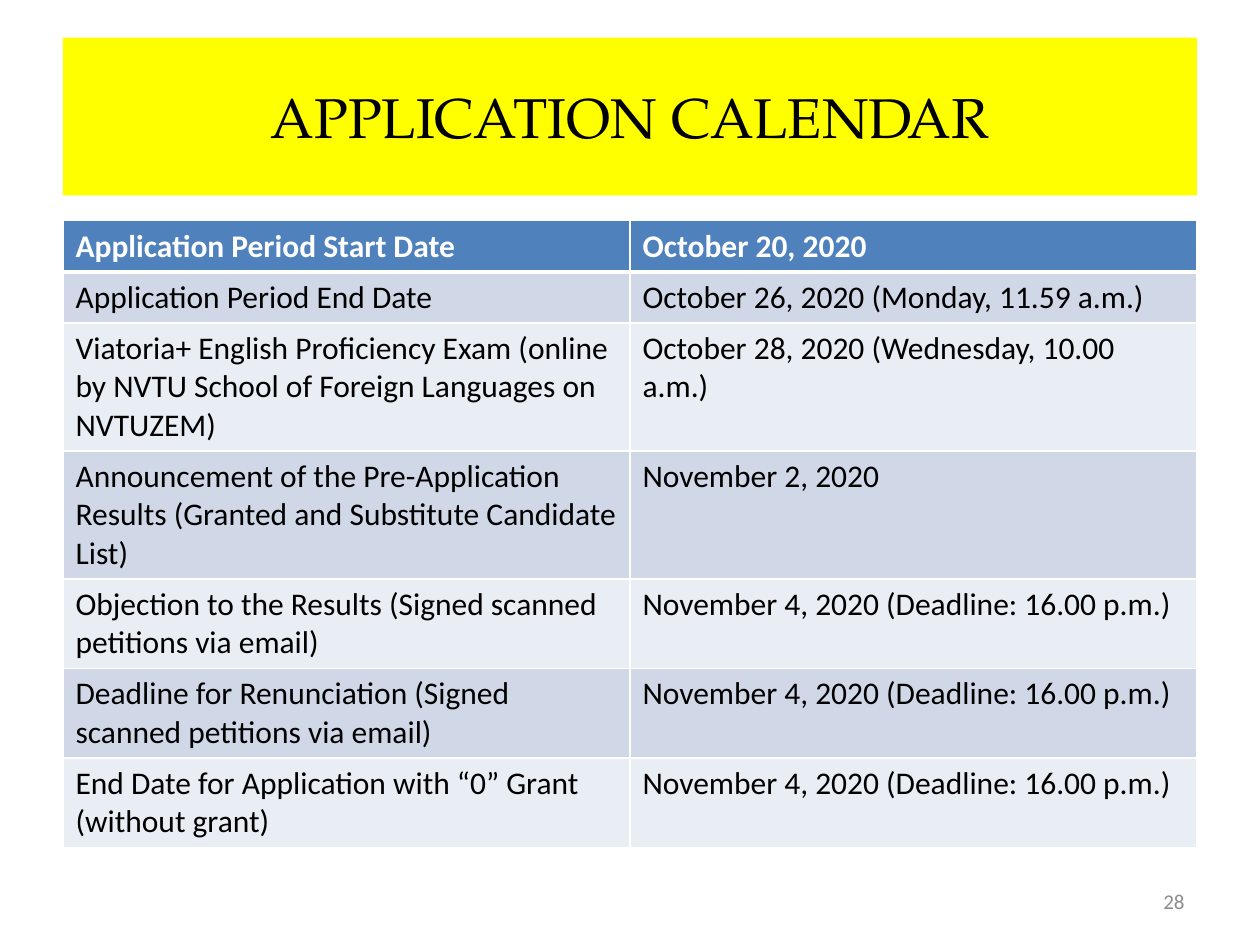
from lxml.etree import SubElement as Sub
from pptx import Presentation
from pptx.dml.color import RGBColor as Rgb
from pptx.enum.shapes import MSO_SHAPE as Shape
from pptx.enum.text import MSO_ANCHOR as Anchor, PP_ALIGN as Align
from pptx.oxml.ns import qn
from pptx.util import Cm, Pt

ROWS = [
    ("Application Period Start Date", "October 20, 2020"),
    ("Application Period End Date", "October 26, 2020 (Monday, 11.59 a.m.)"),
    ("Viatoria+ English Proficiency Exam (online by NVTU School of Foreign "
     "Languages on NVTUZEM)", "October 28, 2020 (Wednesday, 10.00 a.m.)"),
    ("Announcement of the Pre-Application Results (Granted and Substitute "
     "Candidate List)", "November 2, 2020"),
    ("Objection to the Results (Signed scanned petitions via email)",
     "November 4, 2020 (Deadline: 16.00 p.m.)"),
    ("Deadline for Renunciation (Signed scanned petitions via email)",
     "November 4, 2020 (Deadline: 16.00 p.m.)"),
    ("End Date for Application with “0” Grant (without grant)",
     "November 4, 2020 (Deadline: 16.00 p.m.)"),
]
TITLE = {"name": "TeX Gyre Pagella", "size": Pt(32)}
HEAD = {"name": "Calibri", "size": Pt(18), "bold": True}
BODY = {**HEAD, "bold": False}
PAGE = {"name": "Calibri", "size": Pt(12)}
EDGES = {"lnL": 1, "lnR": 1, "lnT": 1, "lnB": 3}


def paint(item, tone):
    """Give a fill or a font a solid hex colour."""
    if hasattr(item, "solid"):
        item.solid()
        item = item.fore_color
    else:
        item = item.color
    item.rgb = Rgb.from_string(tone)


def edge(cell, sides, tone):
    """Draw the cell borders, given as widths in points by side."""
    props = cell._tc.get_or_add_tcPr()
    for spot, (side, width) in enumerate(sides.items()):
        line = Sub(props, qn(f"a:{side}"), w=str(Pt(width)))
        Sub(Sub(line, qn("a:solidFill")), qn("a:srgbClr"), val=tone)
        props.insert(spot, line)


def write(frame, text, style, tone, align=Align.LEFT):
    """Put one styled paragraph into a text frame."""
    frame.word_wrap = True
    para = frame.paragraphs[0]
    para.alignment = align
    run = para.add_run()
    run.text = text
    for key, value in style.items():
        setattr(run.font, key, value)
    paint(run.font, tone)


def add_title(slide, box, text):
    """Draw the yellow title band."""
    band = slide.shapes.add_shape(Shape.RECTANGLE, *map(Cm, box))
    band.shadow.inherit = False
    paint(band.fill, "FFFF00")
    band.line.fill.background()
    band.text_frame.vertical_anchor = Anchor.MIDDLE
    write(band.text_frame, text, TITLE, "000000", Align.CENTER)


def add_dates(slide, box, rows):
    """Draw the table of steps and dates."""
    size = len(rows), len(rows[0])
    table = slide.shapes.add_table(*size, *map(Cm, box)).table
    for i, row in enumerate(rows):
        fill = ("D0D8E8" if i % 2 else "E9EDF4") if i else "4F81BD"
        style, tone = (BODY, "000000") if i else (HEAD, "FFFFFF")
        for j, text in enumerate(row):
            cell = table.cell(i, j)
            paint(cell.fill, fill)
            write(cell.text_frame, text, style, tone)
            if i == 0:
                edge(cell, EDGES, "FFFFFF")


def add_page(slide, box, text):
    """Place the page number."""
    frame = slide.shapes.add_textbox(*map(Cm, box)).text_frame
    frame.vertical_anchor = Anchor.MIDDLE
    write(frame, text, PAGE, "8C8C8C", Align.RIGHT)


def main():
    """Build and save the slide."""
    deck = Presentation()
    deck.slide_width, deck.slide_height = Cm(25.4), Cm(19.05)
    slide = deck.slides.add_slide(deck.slide_layouts[6])
    left, width = 1.27, 22.86
    add_title(slide, (left, 0.76, width, 3.18), "APPLICATION CALENDAR")
    add_dates(slide, (left, 4.45, width, 1.03 * len(ROWS)), ROWS)
    add_page(slide, (18.2, 17.65, 5.93, 1.02), "28")
    deck.save("out.pptx")


if __name__ == "__main__":
    main()
